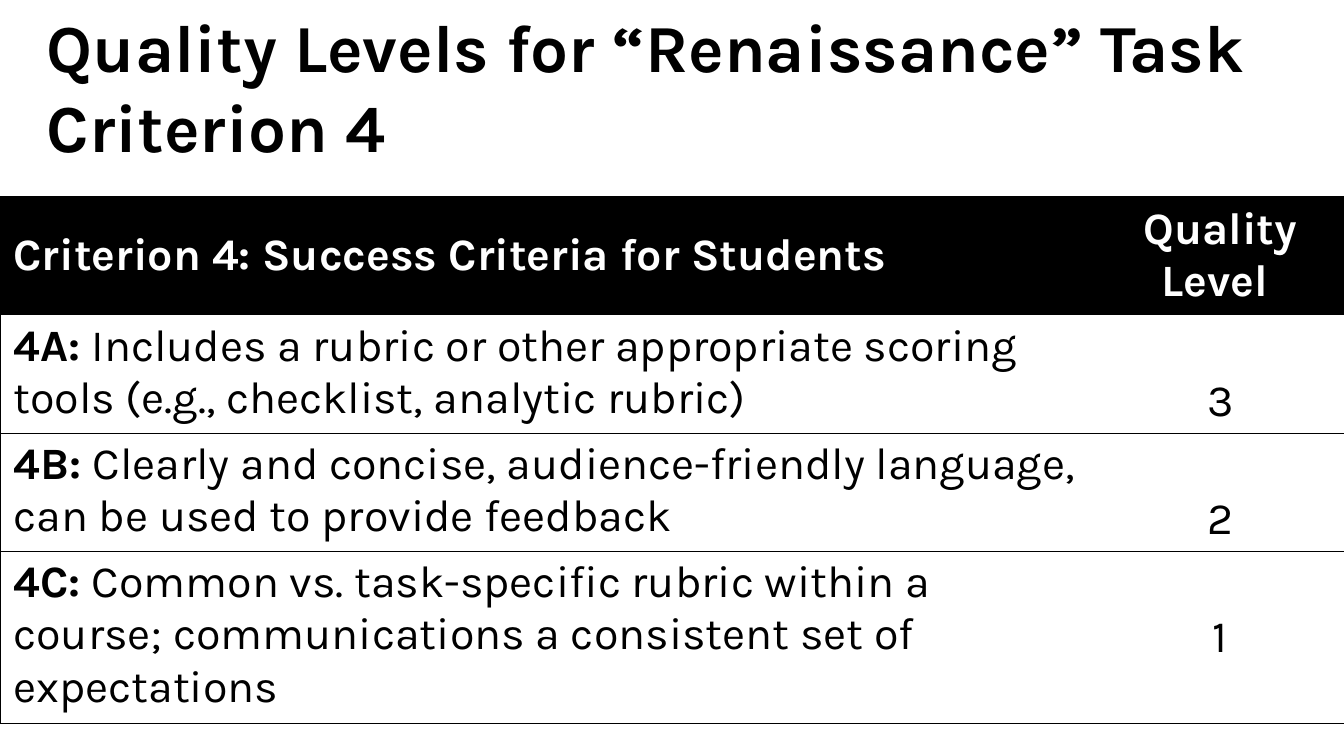
from lxml import etree
from pptx import Presentation
from pptx import util as u
from pptx.dml.color import RGBColor
from pptx.enum import text
from pptx.oxml.ns import qn

WIDTH = u.Inches(10)
HEIGHT = WIDTH * 9 // 16
COLORS = {"ink": "000000", "paper": "FFFFFF"}
FONT = "Karla"
MIDDLE, BOTTOM = text.MSO_ANCHOR.MIDDLE, text.MSO_ANCHOR.BOTTOM

HEADINGS = ("Criterion 4: Success Criteria for Students", "Quality Level ")
# Label, description, quality level, anchor of the level, row height in inches
LEVELS = [
    ("4A: ", "Includes a rubric or other appropriate scoring tools "
     "(e.g., checklist, analytic rubric)", "3", BOTTOM, 0.88),
    ("4B: ", "Clearly and concise, audience-friendly language, "
     "can be used to provide feedback", "2", BOTTOM, 0.88),
    ("4C: ", "Common vs. task-specific rubric within a course; "
     "communications a consistent set of expectations", "1", MIDDLE, 1.27),
]
HEADER_HEIGHT = 0.87
COLUMN_SHARES = (0.816, 0.184)


def add_text(paragraph, words, size=24, color="ink", bold=False, centered=False):
    """Append one formatted run to a paragraph."""
    if centered:
        paragraph.alignment = text.PP_ALIGN.CENTER
    run = paragraph.add_run()
    run.text = words
    run.font.name = FONT
    run.font.size = u.Pt(size)
    run.font.bold = bold
    run.font.color.rgb = RGBColor.from_string(COLORS[color])


def set_borders(cell, visible):
    """Draw the visible sides (a string of L, R, T, B) and clear the others."""
    properties = cell._tc.get_or_add_tcPr()
    for index, side in enumerate("LRTB"):
        line = etree.Element(qn(f"a:ln{side}"), w=str(u.Pt(0.5)))
        if side in visible:
            fill = etree.SubElement(line, qn("a:solidFill"))
            etree.SubElement(fill, qn("a:srgbClr"), val=COLORS["ink"])
        else:
            etree.SubElement(line, qn("a:noFill"))
        properties.insert(index, line)


def format_cell(cell, fill, anchor, outer_side):
    cell.fill.solid()
    cell.fill.fore_color.rgb = RGBColor.from_string(COLORS[fill])
    cell.vertical_anchor = anchor
    cell.margin_top = cell.margin_bottom = u.Inches(0.04)
    set_borders(cell, outer_side + "TB")
    return cell.text_frame.paragraphs[0]


def add_title(slide, left, top, width, height):
    frame = slide.shapes.add_textbox(left, top, width, height).text_frame
    frame.word_wrap = True
    frame.vertical_anchor = MIDDLE
    add_text(frame.paragraphs[0], "Quality Levels for “Renaissance” Task Criterion 4",
             size=36, bold=True)


def add_levels_table(slide, left, top, width):
    heights = [u.Inches(h) for h in (HEADER_HEIGHT, *(level[-1] for level in LEVELS))]
    table = slide.shapes.add_table(len(heights), len(COLUMN_SHARES),
                                   left, top, width, sum(heights)).table
    table.first_row = table.horz_banding = False
    for column, share in zip(table.columns, COLUMN_SHARES):
        column.width = int(width * share)
    for row, height in zip(table.rows, heights):
        row.height = height

    # Header row
    for column, heading in enumerate(HEADINGS):
        paragraph = format_cell(table.cell(0, column), "ink", MIDDLE, "LR"[column])
        add_text(paragraph, heading, color="paper", bold=True, centered=column == 1)

    # One row for each quality level
    for row, (label, description, level, anchor, _) in enumerate(LEVELS, start=1):
        paragraph = format_cell(table.cell(row, 0), "paper", text.MSO_ANCHOR.TOP, "L")
        add_text(paragraph, label, bold=True)
        add_text(paragraph, description)
        paragraph = format_cell(table.cell(row, 1), "paper", anchor, "R")
        add_text(paragraph, level, centered=True)


def main():
    presentation = Presentation()
    presentation.slide_width, presentation.slide_height = WIDTH, HEIGHT
    slide = presentation.slides.add_slide(presentation.slide_layouts[6])
    add_title(slide, int(WIDTH * 0.025), 0, int(WIDTH * 0.95), int(HEIGHT * 0.226))
    add_levels_table(slide, 0, int(HEIGHT * 0.26), WIDTH)
    presentation.save("out.pptx")


if __name__ == "__main__":
    main()
